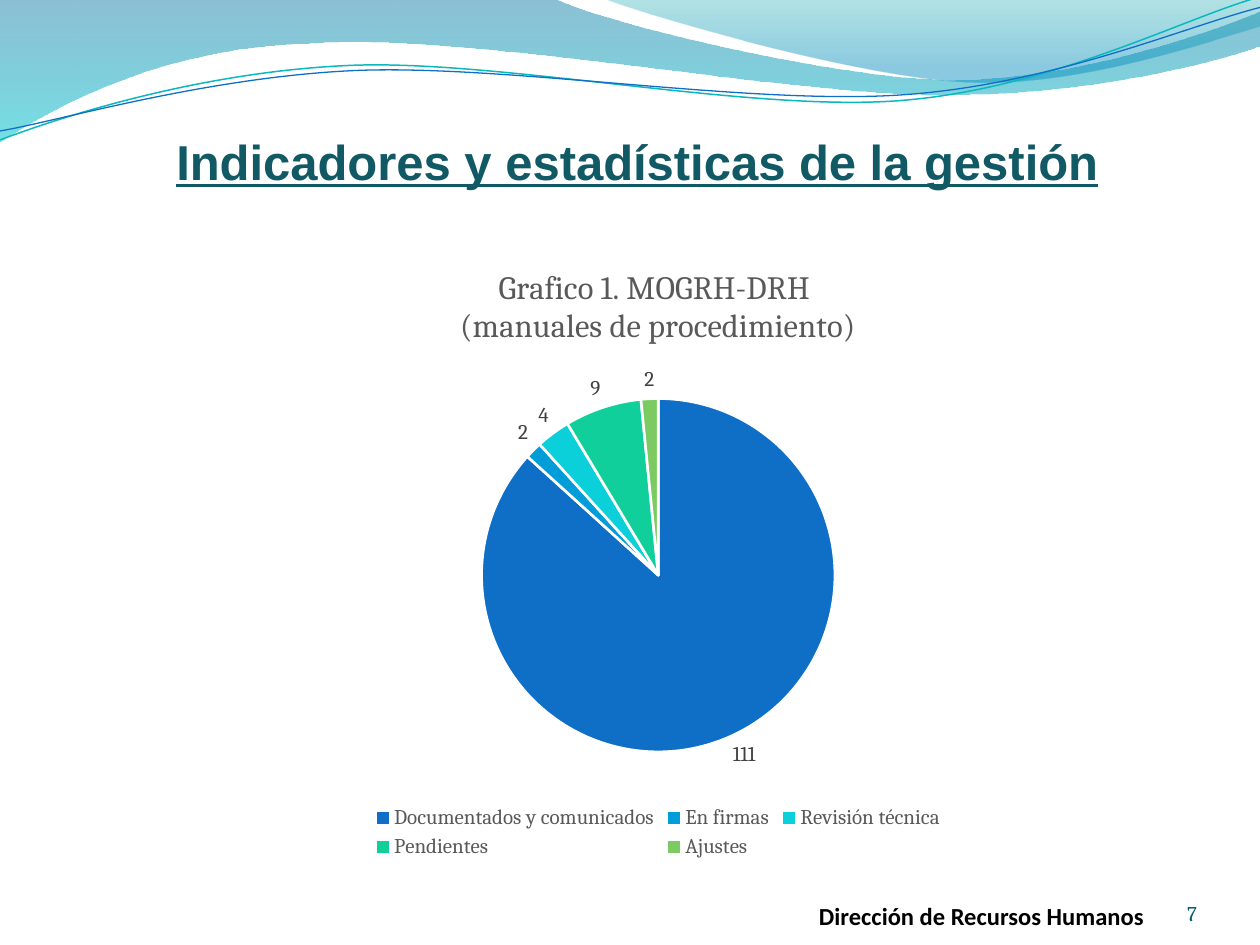
from dataclasses import dataclass
from math import cos, radians, sin

from lxml import etree
from pptx import Presentation
from pptx.chart.data import CategoryChartData
from pptx.dml.color import RGBColor
from pptx.enum.chart import XL_CHART_TYPE, XL_LABEL_POSITION, XL_LEGEND_POSITION
from pptx.enum.text import MSO_ANCHOR, MSO_AUTO_SIZE, PP_ALIGN
from pptx.oxml import parse_xml
from pptx.oxml.ns import nsdecls, qn
from pptx.util import Cm, Pt

WHITE = RGBColor(0xFF, 0xFF, 0xFF)
BLACK = RGBColor(0, 0, 0)
TITLE_TEAL = RGBColor(0x11, 0x59, 0x64)
NUMBER_TEAL = RGBColor(0x04, 0x5D, 0x75)
GREY = RGBColor(0x59, 0x59, 0x59)
LABEL_GREY = RGBColor(0x40, 0x40, 0x40)
WAVE_BLUE = RGBColor(0x00, 0x74, 0xA1)
WAVE_CYAN = RGBColor(0x00, 0xC6, 0xCF)
CREST_TEAL = RGBColor(0x00, 0xA1, 0xA9)
CREST_BLUE = RGBColor(0x00, 0x8B, 0xBF)
LINE_TEAL = RGBColor(0x0A, 0xB8, 0xBF)
BLUE = RGBColor(0x0F, 0x6F, 0xC6)
SKY = RGBColor(0x00, 0x9D, 0xD9)
CYAN = RGBColor(0x0B, 0xD0, 0xD9)
GREEN = RGBColor(0x10, 0xCF, 0x9B)
LIME = RGBColor(0x7C, 0xCA, 0x62)

WAVE = [(0, 0), (11.18, -0.03), (12.09, 0.43, 16.87, 1.6, 19.25, 1.6),
        (21.67, 1.6, 24.33, 0.66, 25.4, 0.23), (25.43, 0.91),
        (24.97, 1.12, 22.1, 1.93, 18.95, 1.91), (15.8, 1.91, 9.7, 0.71, 6.53, 0.86),
        (3.28, 0.91, 1.17, 2.11, -0.03, 2.87), (0, 0)]
CREST = [(12.17, -0.03), (12.93, 0.28, 17.32, 1.57, 19.53, 1.65),
         (21.74, 1.75, 24.41, 0.81, 25.4, 0.53), (25.4, 0), (12.17, -0.03)]
TEAL_CURVE = [(0, 2.82), (1.22, 2.36, 4.01, 1.45, 7.04, 1.32),
              (10.03, 1.19, 15.06, 2.26, 18.11, 2.03), (21.16, 1.8, 23.83, 0.38, 25.35, -0.05)]
BLUE_CURVE = [(0, 2.64), (1.19, 2.44, 4.17, 1.55, 7.19, 1.42),
              (10.24, 1.3, 15.16, 2.13, 18.21, 1.91), (21.23, 1.7, 23.9, 0.53, 25.4, 0.15)]
CURVE_TILT = -2.7
CURVE_CENTRE = (12.68, 1.48)

STATES = [("Documentados y comunicados", 111, BLUE), ("En firmas", 2, SKY),
          ("Revisión técnica", 4, CYAN), ("Pendientes", 9, GREEN), ("Ajustes", 2, LIME)]


@dataclass
class Box:
    left: float
    top: float
    width: float
    height: float

    def lengths(self):
        return Cm(self.left), Cm(self.top), Cm(self.width), Cm(self.height)

    def inner(self, left, top, width, height):
        return Box(self.left + left, self.top + top, width, height)


def style_font(font, name, size, color, bold=False):
    font.name, font.size, font.bold = name, Pt(size), bold
    font.color.rgb = color


def turn(x, y, degrees):
    angle = radians(degrees)
    dx, dy = x - CURVE_CENTRE[0], y - CURVE_CENTRE[1]
    return (CURVE_CENTRE[0] + dx * cos(angle) - dy * sin(angle),
            CURVE_CENTRE[1] + dx * sin(angle) + dy * cos(angle))


def add_outline(slide, box, outline, close, tilt=0):
    segments = []
    for segment in outline:
        pairs = [turn(x, y, -tilt) for x, y in zip(segment[::2], segment[1::2])]
        segments.append([(Cm(box.left + x), Cm(box.top + y)) for x, y in pairs])
    ends = [segment[-1] for segment in segments]
    builder = slide.shapes.build_freeform(*ends[0])
    builder.add_line_segments(ends[1:], close=close)
    shape = builder.convert_to_shape()
    shape.shadow.inherit = False
    steps = list(shape._element.spPr.iter(qn("a:lnTo")))
    for step, segment in zip(steps, segments[1:]):
        if len(segment) == 3:
            bend = etree.Element(qn("a:cubicBezTo"))
            for x, y in segment:
                etree.SubElement(bend, qn("a:pt"), x=str(x - shape.left), y=str(y - shape.top))
            step.getparent().replace(step, bend)
    shape.rotation = tilt
    return shape


def add_waves(slide, box):
    bands = [(WAVE, [(0, WAVE_BLUE, 45), (1, WAVE_CYAN, 55)]),
             (CREST, [(0, CREST_TEAL, 30), (0.8, CREST_BLUE, 45)])]
    for outline, stops in bands:
        band = add_outline(slide, box, outline, True)
        band.line.fill.background()
        band.fill.gradient()
        band.fill.gradient_angle = 270
        for stop, (position, color, _) in zip(band.fill.gradient_stops, stops):
            stop.position = position
            stop.color.rgb = color
        colors = list(band._element.spPr.iter(qn("a:srgbClr")))
        for element, (_, _, opacity) in zip(colors, stops):
            etree.SubElement(element, qn("a:alpha"), val=str(opacity * 1000))
    for outline, color, width in [(TEAL_CURVE, LINE_TEAL, 0.85), (BLUE_CURVE, BLUE, 0.75)]:
        curve = add_outline(slide, box, outline, False, CURVE_TILT)
        curve.fill.background()
        curve.line.color.rgb = color
        curve.line.width = Pt(width)


def place_title(slide, box):
    title = slide.shapes.title
    title.left, title.top, title.width, title.height = box.lengths()
    frame = title.text_frame
    frame.text = "Indicadores y estadísticas de la gestión"
    frame.auto_size = MSO_AUTO_SIZE.NONE
    heading = frame.paragraphs[0]
    heading.alignment = PP_ALIGN.LEFT
    style_font(heading.font, "Arial", 28, TITLE_TEAL, True)
    heading.font.underline = True


def add_chart(slide, box):
    data = CategoryChartData()
    data.categories = [state for state, _, _ in STATES]
    data.add_series("Series 1", [count for _, count, _ in STATES])
    chart = slide.shapes.add_chart(XL_CHART_TYPE.PIE, *box.lengths(), data).chart
    style_font(chart.font, "Cambria", 10, BLACK)

    heading = chart.chart_title.text_frame
    heading.text = "Grafico 1. MOGRH-DRH \n(manuales de procedimiento)"
    for line in heading.paragraphs:
        style_font(line.font, "Cambria", 18.6, GREY)

    chart.has_legend = True
    chart.legend.position = XL_LEGEND_POSITION.BOTTOM
    chart.legend.include_in_layout = False
    style_font(chart.legend.font, "Cambria", 12, GREY)

    pie = chart.plots[0]
    pie.vary_by_categories = True
    for index, (_, _, color) in enumerate(STATES):
        slice_format = pie.series[0].points[index].format
        slice_format.fill.solid()
        slice_format.fill.fore_color.rgb = color
        slice_format.line.color.rgb = WHITE
        slice_format.line.width = Pt(1.5)
    labels = pie.series[0].data_labels
    labels.show_value = True
    labels.position = XL_LABEL_POSITION.OUTSIDE_END
    style_font(labels.font, "Cambria", 12, LABEL_GREY)

    plot_area = chart._chartSpace.chart.plotArea
    for layout in plot_area.findall(qn("c:layout")):
        plot_area.remove(layout)
    places = "".join(f'<c:{key} val="{value}"/>' for key, value in [
        ("layoutTarget", "inner"), ("xMode", "edge"), ("yMode", "edge"),
        ("x", 0.3), ("y", 0.25), ("w", 0.4), ("h", 0.57)])
    plot_area.insert(0, parse_xml(
        f'<c:layout {nsdecls("c")}><c:manualLayout>{places}</c:manualLayout></c:layout>'))


def add_footer(slide, box):
    entries = [
        (box.inner(0, 0.08, 7.6, 1.02), "Dirección de Recursos Humanos",
         PP_ALIGN.LEFT, 0.13, ("Calibri", 14, BLACK, True)),
        (box.inner(5.51, 0, 2.11, 1.02), "7",
         PP_ALIGN.RIGHT, 0, ("Cambria", 12, NUMBER_TEAL)),
    ]
    for place, wording, alignment, inset, style in entries:
        frame = slide.shapes.add_textbox(*place.lengths()).text_frame
        frame.word_wrap = True
        frame.vertical_anchor = MSO_ANCHOR.BOTTOM
        frame.margin_left = frame.margin_right = frame.margin_bottom = 0
        frame.margin_top = Cm(inset)
        frame.text = wording
        frame.paragraphs[0].alignment = alignment
        style_font(frame.paragraphs[0].font, *style)


def main():
    deck = Presentation()
    deck.slide_width, deck.slide_height = Cm(25.4), Cm(19.05)
    slide = deck.slides.add_slide(deck.slide_layouts[5])
    add_waves(slide, Box(0, 0, 25.4, 2.9))
    add_footer(slide, Box(16.51, 17.65, 7.62, 1.1))
    place_title(slide, Box(3.3, 2.51, 19.2, 1.45))
    add_chart(slide, Box(4.24, 4.91, 18.06, 12.5))
    deck.save("out.pptx")


if __name__ == "__main__":
    main()
